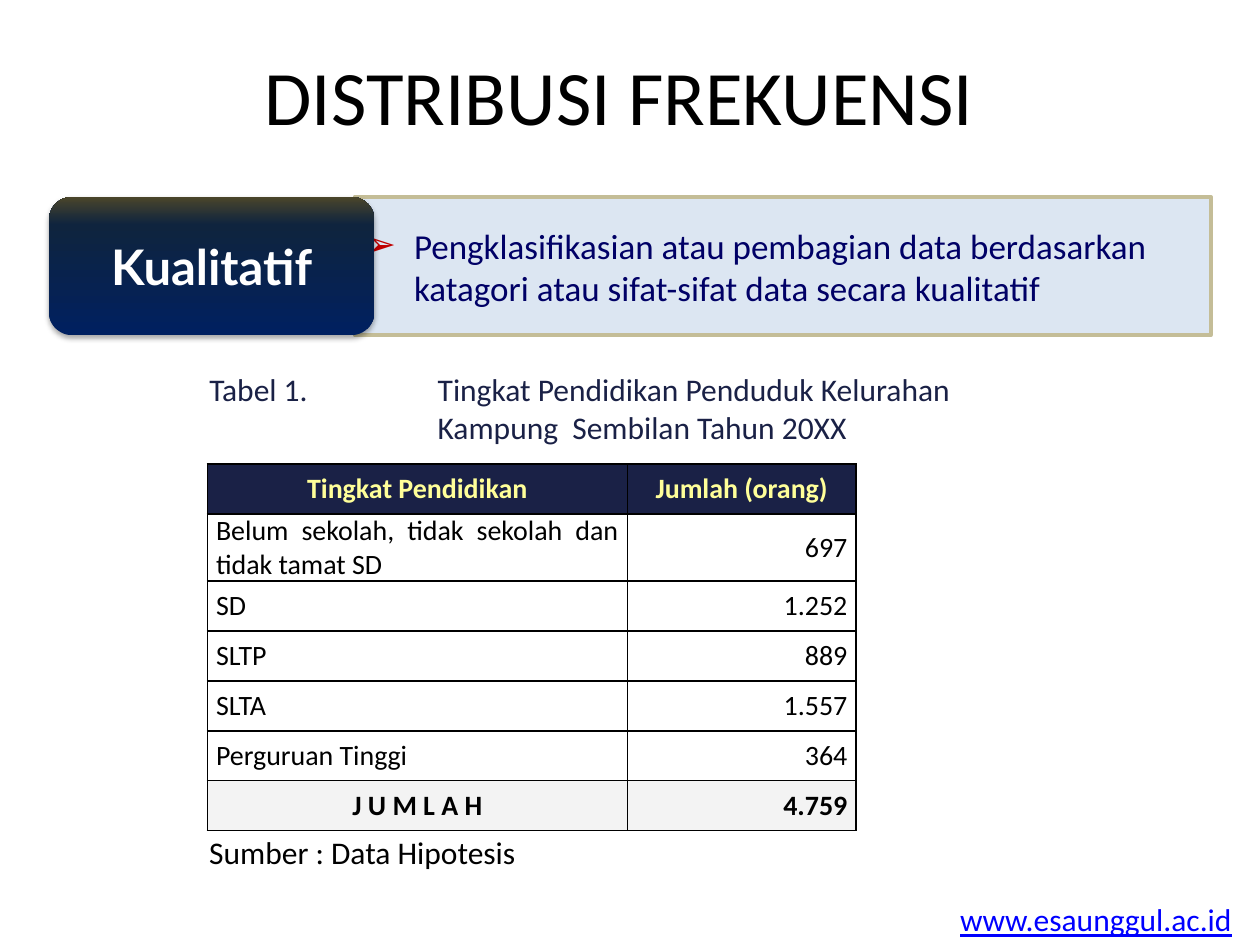
from lxml.etree import SubElement
from pptx import Presentation
from pptx.dml.color import RGBColor
from pptx.enum.shapes import MSO_SHAPE
from pptx.enum.text import MSO_ANCHOR, PP_ALIGN
from pptx.oxml import parse_xml
from pptx.oxml.ns import qn
from pptx.util import Pt

HEX = {"ink": "000000", "link": "0000FF", "pale": "DCE6F2", "sand": "C4BD97",
       "red": "C00000", "blue": "000066", "white": "FFFFFF", "navy": "1A2146",
       "cream": "FFFF99", "grey": "F3F3F3", "deep": "002060", "night": "0F243E",
       "olive": "4A452A"}
NS = 'xmlns:a="http://schemas.openxmlformats.org/drawingml/2006/main"'
MID, LEFT, RIGHT = PP_ALIGN.CENTER, PP_ALIGN.LEFT, PP_ALIGN.RIGHT


def rgb(name):
    return RGBColor.from_string(HEX[name])


def solid(parent, name):
    fill = SubElement(parent, qn("a:solidFill"))
    SubElement(fill, qn("a:srgbClr"), val=HEX[name])


class Deck:
    def __init__(self, font="Calibri"):
        self.prs = Presentation()
        self.prs.slide_width, self.prs.slide_height = Pt(720), Pt(540)
        self.slide = self.prs.slides.add_slide(self.prs.slide_layouts[6])
        self.font = font

    def style(self, para, color, align=LEFT, **form):
        para.alignment = align
        for key, val in {"name": self.font, "bold": False, **form}.items():
            setattr(para.font, key, val)
        para.font.color.rgb = rgb(color)

    def text(self, box, lines, size, color, wrap=True, mark=None, **form):
        frame = box.text_frame
        frame.word_wrap = wrap
        frame.text = "\n".join(lines)
        for para in frame.paragraphs:
            if mark:
                self.bullet(para, mark)
            self.style(para, color, size=Pt(size), **form)
        return frame

    def label(self, area, lines, size, color, **form):
        box = self.slide.shapes.add_textbox(*map(Pt, area))
        return self.text(box, lines, size, color, **form)

    def shape(self, kind, area):
        box = self.slide.shapes.add_shape(kind, *map(Pt, area))
        box.shadow.inherit = False
        box.text_frame.vertical_anchor = MSO_ANCHOR.MIDDLE
        return box

    def panel(self, area, line, size, color):
        box = self.shape(MSO_SHAPE.RECTANGLE, area)
        box.fill.solid()
        box.fill.fore_color.rgb = rgb("pale")
        box.line.color.rgb = rgb("sand")
        box.line.width = Pt(2)
        self.text(box, [line], size, color, mark="➢")

    def badge(self, area, line, size, stops):
        """Rounded box with an upward gradient and a soft shadow."""
        box = self.shape(MSO_SHAPE.ROUNDED_RECTANGLE, area)
        box.line.fill.background()
        marks = "".join(f'<a:gs pos="{pos * 1000}"><a:srgbClr val="{HEX[name]}"/></a:gs>'
                        for pos, name in stops)
        props = box._element.spPr
        props.find(qn("a:prstGeom")).addnext(parse_xml(
            f'<a:gradFill {NS} rotWithShape="1"><a:gsLst>{marks}</a:gsLst>'
            '<a:lin ang="16200000" scaled="0"/></a:gradFill>'))
        props.find(qn("a:effectLst")).append(parse_xml(
            f'<a:outerShdw {NS} blurRad="{Pt(3.1)}" dist="{Pt(1.8)}" dir="5400000" '
            f'rotWithShape="0"><a:srgbClr val="{HEX["ink"]}"><a:alpha val="35000"/>'
            '</a:srgbClr></a:outerShdw>'))
        self.text(box, [line], size, "white", align=MID, name="Lato", bold=True)

    def hang(self, para, left, first=None):
        """Indent a paragraph; its first line hangs back to the edge by default."""
        props = para._p.get_or_add_pPr()
        props.set("marL", str(Pt(left)))
        props.set("indent", str(Pt(-left if first is None else first)))

    def bullet(self, para, mark):
        self.hang(para, 27)
        props = para._p.get_or_add_pPr()
        tint = SubElement(props, qn("a:buClr"))
        SubElement(tint, qn("a:srgbClr"), val=HEX["red"])
        SubElement(props, qn("a:buFont"), typeface=self.font)
        SubElement(props, qn("a:buChar"), char=mark)

    def cell(self, cell, line, fill, color, align, bold):
        for side, gap in {"left": 5, "right": 5, "top": 0, "bottom": 0}.items():
            setattr(cell, f"margin_{side}", Pt(gap))
        cell.vertical_anchor = MSO_ANCHOR.MIDDLE
        cell.text = line
        self.style(cell.text_frame.paragraphs[0], color, align,
                   size=Pt(16), bold=bold)
        props = cell._tc.get_or_add_tcPr()
        for tag in ("lnL", "lnR", "lnT", "lnB"):
            solid(SubElement(props, qn(f"a:{tag}"), w=str(Pt(1))), "ink")
        if fill:
            cell.fill.solid()
            cell.fill.fore_color.rgb = rgb(fill)
        else:
            cell.fill.background()

    def table(self, left, top, rows, widths, heights):
        area = map(Pt, (left, top, sum(widths), sum(heights)))
        grid = self.slide.shapes.add_table(len(rows), len(widths), *area).table
        for col, width in zip(grid.columns, widths):
            col.width = Pt(width)
        for row, high in zip(grid.rows, heights):
            row.height = Pt(high)
        last = len(rows) - 1
        for i, row in enumerate(rows):
            if i == 0:
                fill, color, aligns = "navy", "cream", (MID, MID)
            elif i == last:
                fill, color, aligns = "grey", "ink", (MID, RIGHT)
            else:
                fill, color, aligns = None, "ink", (PP_ALIGN.JUSTIFY, RIGHT)
            for j, line in enumerate(row):
                self.cell(grid.cell(i, j), line, fill, color, aligns[j],
                          i in (0, last))


def main():
    deck = Deck()
    deck.label((541.5, 511, 171, 29), ["www.esaunggul.ac.id"], 18, "link",
               wrap=False, underline=True)
    deck.label((48, 24, 612, 90), ["DISTRIBUSI FREKUENSI"], 44, "ink", align=MID)
    deck.panel((202.5, 112.5, 489.5, 79),
               "Pengklasifikasian atau pembagian data berdasarkan katagori "
               "atau sifat-sifat data secara kualitatif", 20, "blue")
    deck.badge((28, 112.5, 186, 79), "Kualitatif", 28,
               [(0, "deep"), (80, "night"), (100, "olive")])
    frame = deck.label((112.5, 208, 450, 51),
                       ["Tabel 1.\tTingkat Pendidikan Penduduk Kelurahan",
                        "Kampung  Sembilan Tahun 20XX"], 18, "navy")
    for para, first in zip(frame.paragraphs, (None, 0)):
        deck.hang(para, 130.5, first)
    rows = [("Tingkat Pendidikan", "Jumlah (orang)"),
            ("Belum sekolah, tidak sekolah dan tidak tamat SD", "697"),
            ("SD", "1.252"), ("SLTP", "889"), ("SLTA", "1.557"),
            ("Perguruan Tinggi", "364"), ("J U M L A H", "4.759")]
    deck.table(118.5, 265.25, rows, (240, 130.75), [28.5, 38] + [28.5] * 5)
    deck.label((112.5, 472.5, 202, 29), ["Sumber : Data Hipotesis"], 18, "ink")
    deck.prs.save("out.pptx")


if __name__ == "__main__":
    main()
